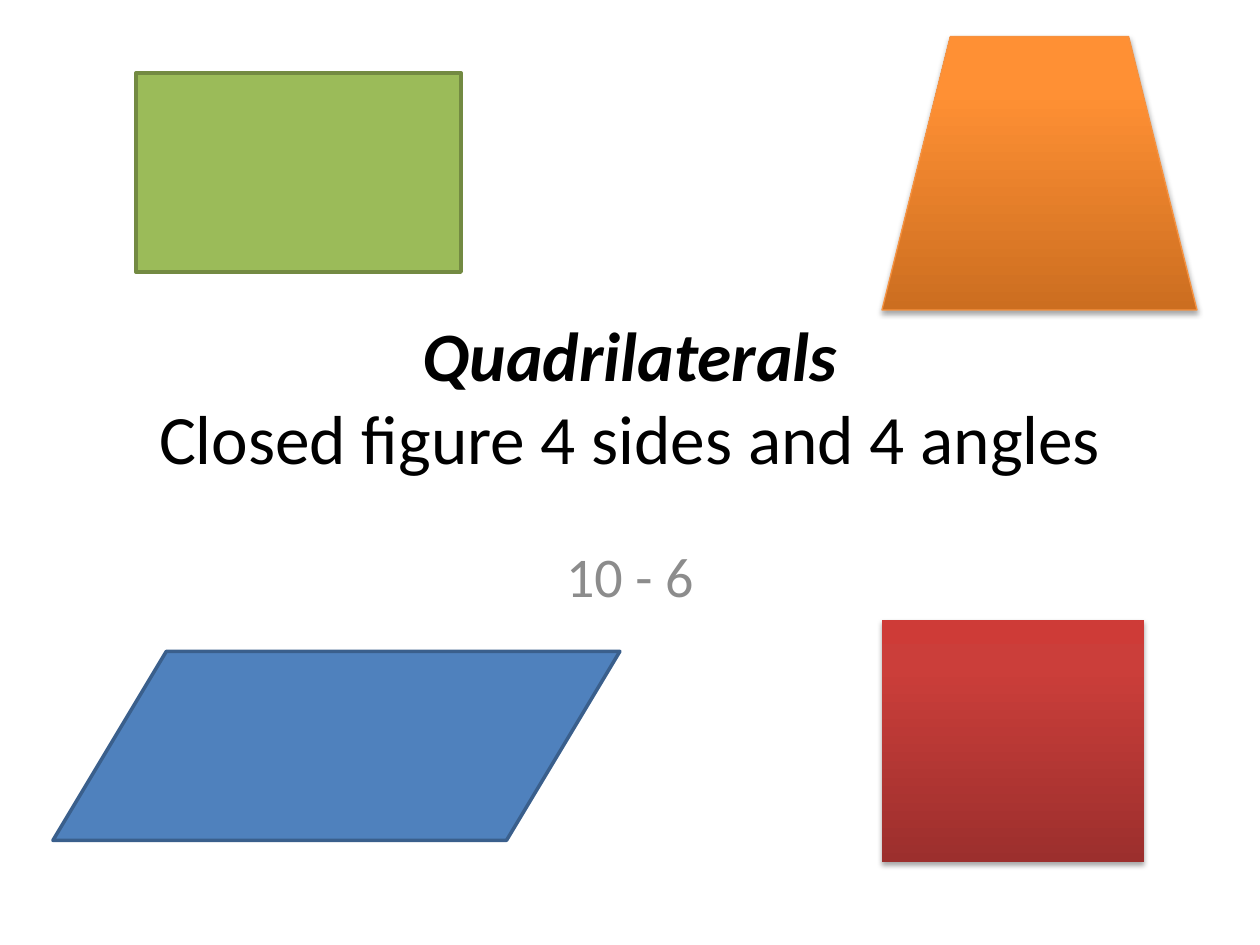
import copy

import pptx
import pptx.dml.color
import pptx.enum.shapes
import pptx.enum.text
import pptx.oxml
import pptx.oxml.ns
import pptx.util

Inches = pptx.util.Inches
Pt = pptx.util.Pt
RGBColor = pptx.dml.color.RGBColor
MSO_SHAPE = pptx.enum.shapes.MSO_SHAPE
MSO_ANCHOR = pptx.enum.text.MSO_ANCHOR
PP_ALIGN = pptx.enum.text.PP_ALIGN
qn = pptx.oxml.ns.qn

BLACK = RGBColor(0x00, 0x00, 0x00)
GRAY = RGBColor(0x8C, 0x8C, 0x8C)
GREEN = RGBColor(0x9B, 0xBB, 0x59)
DARK_GREEN = RGBColor(0x73, 0x8A, 0x42)
BLUE = RGBColor(0x4F, 0x81, 0xBD)
DARK_BLUE = RGBColor(0x3A, 0x5F, 0x8C)
ORANGE_EDGE = RGBColor(0xF6, 0x92, 0x40)
ORANGES = [RGBColor(0xCC, 0x6E, 0x20), RGBColor(0xFF, 0x90, 0x34), RGBColor(0xFF, 0x91, 0x36)]
REDS = [RGBColor(0x9C, 0x2F, 0x2D), RGBColor(0xCB, 0x3E, 0x3A), RGBColor(0xCE, 0x3B, 0x37)]

SHADOW_XML = (
    '<a:outerShdw xmlns:a="http://schemas.openxmlformats.org/drawingml/2006/main"'
    ' blurRad="40000" dist="23000" dir="5400000" rotWithShape="0">'
    '<a:srgbClr val="000000"><a:alpha val="35000"/></a:srgbClr></a:outerShdw>'
)

presentation = pptx.Presentation()
presentation.slide_width = Inches(10)
presentation.slide_height = Inches(7.5)
slide = presentation.slides.add_slide(presentation.slide_layouts[6])


def add_text_frame(left, top, width, height, anchor):
    frame = slide.shapes.add_textbox(Inches(left), Inches(top), Inches(width), Inches(height)).text_frame
    frame.word_wrap = True
    frame.vertical_anchor = anchor
    frame.paragraphs[0].alignment = PP_ALIGN.CENTER
    return frame.paragraphs[0]


def add_run(paragraph, text, size, color, emphasis=False):
    run = paragraph.add_run()
    run.text = text
    run.font.name = "Calibri"
    run.font.size = Pt(size)
    run.font.color.rgb = color
    run.font.bold = emphasis
    run.font.italic = emphasis


title = add_text_frame(0.75, 2.33, 8.5, 1.61, MSO_ANCHOR.MIDDLE)
add_run(title, "Quadrilaterals", 39.6, BLACK, emphasis=True)
title.add_line_break()
add_run(title, "Closed figure 4 sides and 4 angles", 39.6, BLACK)

lesson = add_text_frame(1.5, 4.25, 7, 1.92, MSO_ANCHOR.TOP)
lesson.space_before = Pt(6.4)
add_run(lesson, "10 - 6", 32, GRAY)

quadrilaterals = [
    (MSO_SHAPE.RECTANGLE, 1.08, 0.58, 2.58, 1.58, [GREEN], DARK_GREEN, 2),
    (MSO_SHAPE.TRAPEZOID, 7, 0.29, 2.5, 2.17, ORANGES, ORANGE_EDGE, 0.75),
    (MSO_SHAPE.FLOWCHART_DATA, 0.42, 5.17, 4.5, 1.5, [BLUE], DARK_BLUE, 2),
    (MSO_SHAPE.RECTANGLE, 7, 4.92, 2.08, 1.92, REDS, None, 0),
]

for preset, left, top, width, height, colors, edge, edge_width in quadrilaterals:
    figure = slide.shapes.add_shape(preset, Inches(left), Inches(top), Inches(width), Inches(height))
    figure.shadow.inherit = False
    if len(colors) == 1:
        figure.fill.solid()
        figure.fill.fore_color.rgb = colors[0]
    else:
        figure.fill.gradient()
        figure.fill.gradient_angle = 90
        stop_list = figure._element.spPr.find(qn("a:gradFill")).find(qn("a:gsLst"))
        stop_list.insert(1, copy.deepcopy(stop_list[0]))
        stop_list[1].set("pos", "80000")
        for stop, color in zip(figure.fill.gradient_stops, colors):
            stop.color.rgb = color
        effects = figure._element.spPr.find(qn("a:effectLst"))
        effects.append(pptx.oxml.parse_xml(SHADOW_XML))
    if edge is None:
        figure.line.fill.background()
    else:
        figure.line.color.rgb = edge
        figure.line.width = Pt(edge_width)

presentation.save("out.pptx")
